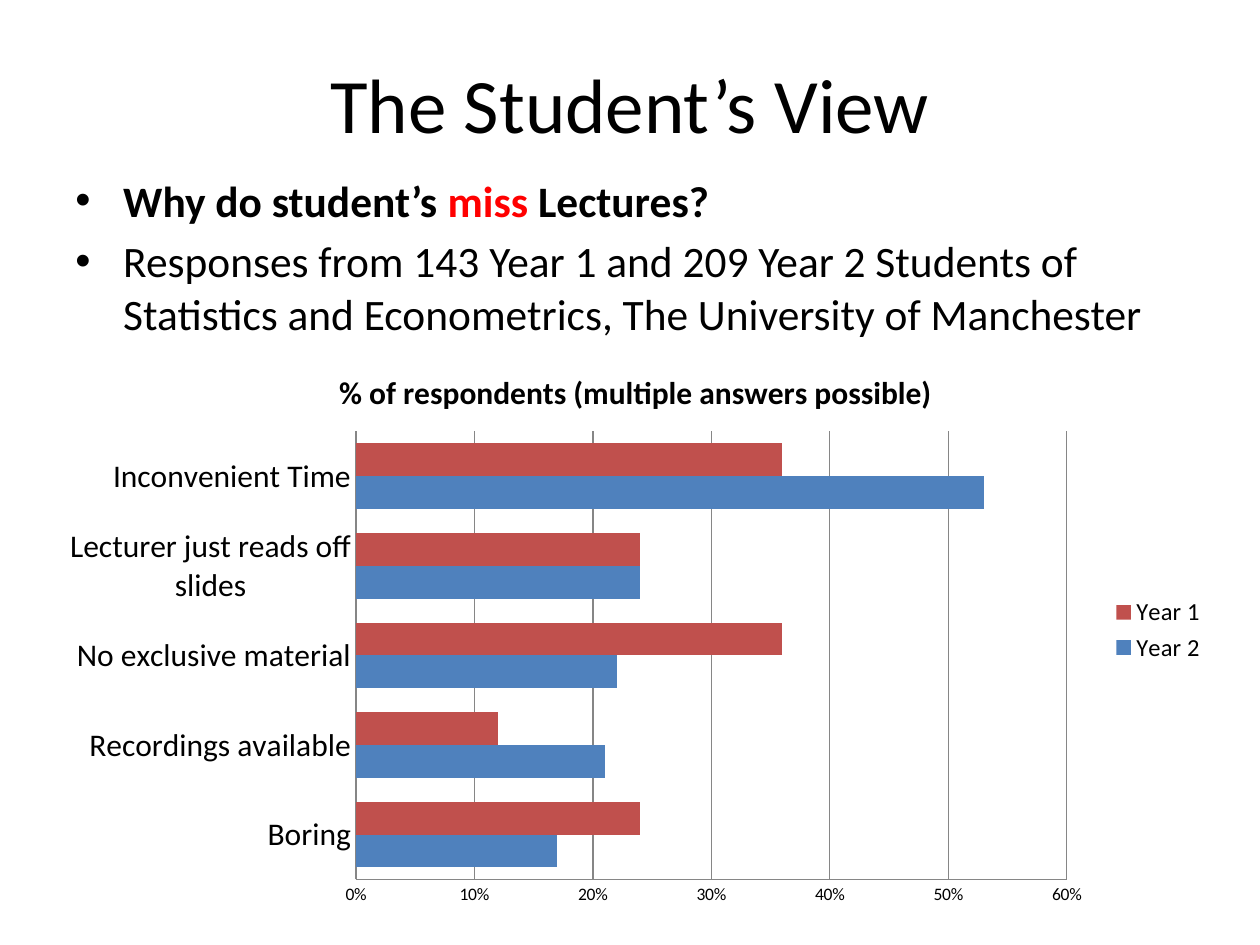
from dataclasses import dataclass

from lxml.etree import SubElement
from pptx import Presentation
from pptx.chart.data import CategoryChartData
from pptx.dml.color import RGBColor
from pptx.enum.chart import XL_CHART_TYPE as ChartType
from pptx.enum.chart import XL_LEGEND_POSITION as LegendPosition
from pptx.enum.chart import XL_TICK_MARK as TickMark
from pptx.enum.text import MSO_ANCHOR as Anchor
from pptx.enum.text import PP_ALIGN as Align
from pptx.oxml import parse_xml
from pptx.oxml.ns import nsdecls, qn
from pptx.util import Inches, Pt


@dataclass(frozen=True)
class Theme:
    font: str = "Calibri"
    text: str = "000000"
    accent: str = "FF0000"
    grid: str = "868686"
    year_1: str = "C0504D"
    year_2: str = "4F81BD"
    title: float = 44
    body: float = 24.8
    chart_label: float = 18
    legend: float = 14
    axis: float = 10


THEME = Theme()

BULLETS = [
    [("Why do student’s ", True, THEME.text),
     ("miss", True, THEME.accent),
     (" Lectures?", True, THEME.text)],
    [("Responses from 143 Year 1 and 209 Year 2 Students of Statistics and "
      "Econometrics, The University of Manchester", False, THEME.text)],
]

CHART_TITLE = "% of respondents (multiple answers possible)"
REASONS = ["Boring", "Recordings available", "No exclusive material",
           "Lecturer just reads off slides", "Inconvenient Time"]
RESPONSES = [
    ("Year 2", THEME.year_2, [0.17, 0.21, 0.22, 0.24, 0.53]),
    ("Year 1", THEME.year_1, [0.24, 0.12, 0.36, 0.24, 0.36]),
]
PLOT_AREA = {"x": 0.26, "y": 0.15, "w": 0.61, "h": 0.79}


def set_format(target, values):
    for name, value in values.items():
        setattr(target, name, value)


def style_font(font, size, bold=False, color=THEME.text):
    set_format(font, {"name": THEME.font, "size": Pt(size), "bold": bold})
    font.color.rgb = RGBColor.from_string(color)


def add_text_frame(slide, box, anchor):
    frame = slide.shapes.add_textbox(*map(Inches, box)).text_frame
    set_format(frame, {"word_wrap": True, "vertical_anchor": anchor})
    return frame


def add_run(paragraph, text, size, bold=False, color=THEME.text):
    run = paragraph.add_run()
    run.text = text
    style_font(run.font, size, bold, color)


def add_title(slide, box):
    paragraph = add_text_frame(slide, box, Anchor.MIDDLE).paragraphs[0]
    paragraph.alignment = Align.CENTER
    add_run(paragraph, "The Student’s View", THEME.title)


def add_bullets(slide, box):
    frame = add_text_frame(slide, box, Anchor.TOP)
    for index, runs in enumerate(BULLETS):
        paragraph = frame.add_paragraph() if index else frame.paragraphs[0]
        paragraph.space_before = Pt(5)
        properties = paragraph._p.get_or_add_pPr()
        properties.set("marL", str(Inches(0.38)))
        properties.set("indent", str(Inches(-0.38)))
        SubElement(properties, qn("a:buFont")).set("typeface", "Arial")
        SubElement(properties, qn("a:buChar")).set("char", "•")
        for text, bold, color in runs:
            add_run(paragraph, text, THEME.body, bold, color)


def fix_plot_area(chart):
    """Pin the inner plot area to fractions of the chart."""
    plot_area = chart._chartSpace.chart.plotArea
    for layout in plot_area.findall(qn("c:layout")):
        plot_area.remove(layout)
    modes = '<c:xMode val="edge"/><c:yMode val="edge"/>'
    sizes = "".join(f'<c:{key} val="{value}"/>' for key, value in PLOT_AREA.items())
    plot_area.insert(0, parse_xml(
        f'<c:layout {nsdecls("c")}><c:manualLayout><c:layoutTarget val="inner"/>'
        f"{modes}{sizes}</c:manualLayout></c:layout>"))


def add_response_chart(slide, box):
    data = CategoryChartData(number_format="0%")
    data.categories = REASONS
    for name, _, values in RESPONSES:
        data.add_series(name, values)
    chart = slide.shapes.add_chart(
        ChartType.BAR_CLUSTERED, *map(Inches, box), data).chart
    style_font(chart.font, THEME.axis)

    # Title and legend
    add_run(chart.chart_title.text_frame.paragraphs[0], CHART_TITLE,
            THEME.chart_label, bold=True)
    chart.chart_title.include_in_layout = False
    chart.has_legend = True
    set_format(chart.legend, {"position": LegendPosition.RIGHT,
                              "include_in_layout": False})
    style_font(chart.legend.font, THEME.legend)

    # Axes and gridlines
    for axis, size in ((chart.category_axis, THEME.chart_label),
                       (chart.value_axis, THEME.axis)):
        set_format(axis, {"major_tick_mark": TickMark.NONE,
                          "minor_tick_mark": TickMark.NONE})
        style_font(axis.tick_labels.font, size)
        axis.format.line.color.rgb = RGBColor.from_string(THEME.grid)
    value_axis = chart.value_axis
    set_format(value_axis, {"minimum_scale": 0, "maximum_scale": 0.6,
                            "major_unit": 0.1, "has_major_gridlines": True})
    set_format(value_axis.tick_labels, {"number_format": "0%",
                                        "number_format_is_linked": False})
    value_axis.major_gridlines.format.line.color.rgb = RGBColor.from_string(THEME.grid)

    # Bars
    plot = chart.plots[0]
    set_format(plot, {"gap_width": 73, "overlap": 0, "vary_by_categories": False})
    for series, (_, color, _) in zip(plot.series, RESPONSES):
        series.format.fill.solid()
        series.format.fill.fore_color.rgb = RGBColor.from_string(color)
    fix_plot_area(chart)


def main():
    presentation = Presentation()
    set_format(presentation, {"slide_width": Inches(10), "slide_height": Inches(7.5)})
    slide = presentation.slides.add_slide(presentation.slide_layouts[6])
    add_title(slide, (0.5, 0.3, 9, 1.03))
    add_bullets(slide, (0.5, 1.33, 9, 1.25))
    add_response_chart(slide, (0.42, 2.75, 9.25, 4.5))
    presentation.save("out.pptx")


if __name__ == "__main__":
    main()
